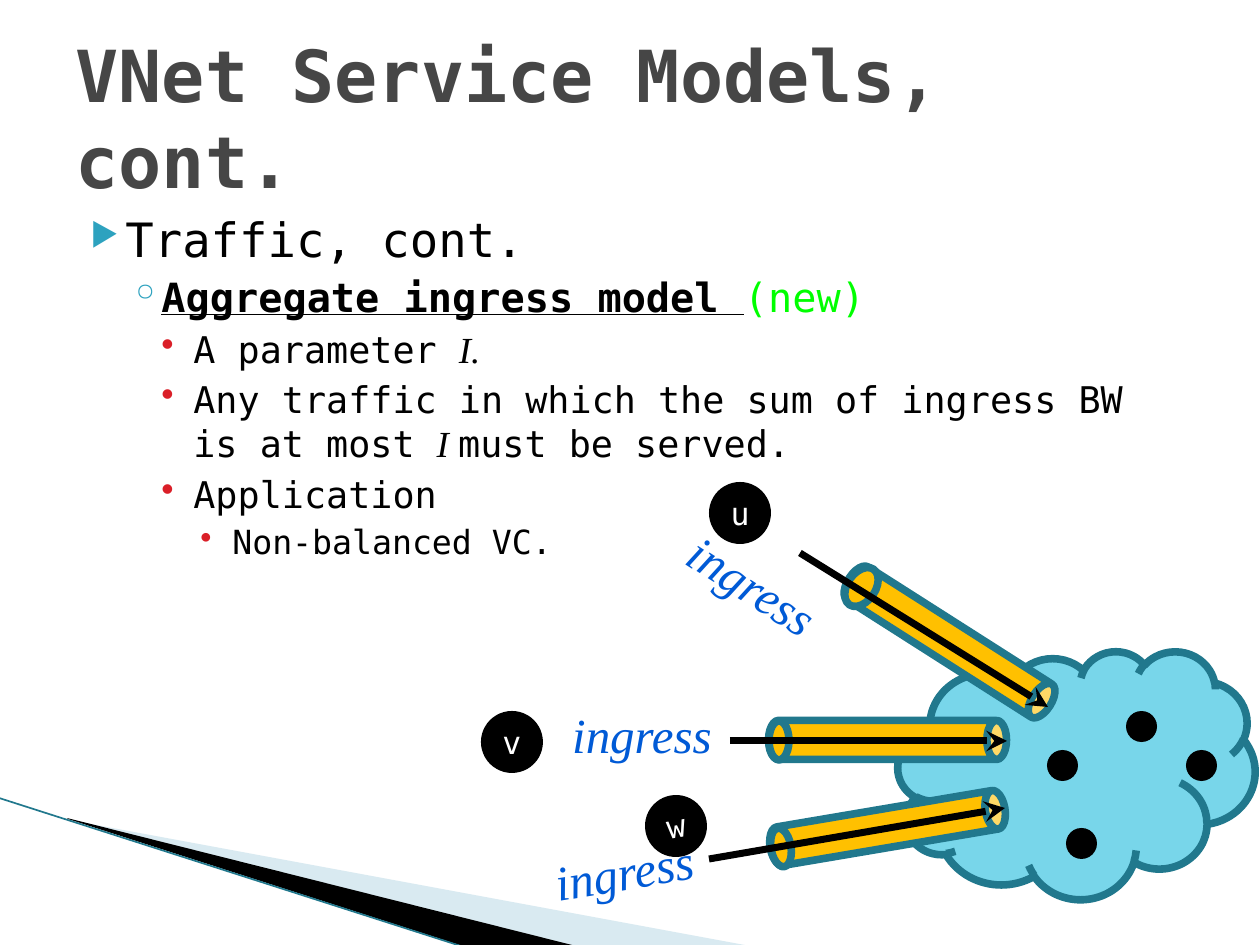
from lxml import etree
from pptx import Presentation
from pptx.dml.color import RGBColor
from pptx.enum.shapes import MSO_CONNECTOR, MSO_SHAPE
from pptx.enum.text import MSO_ANCHOR, PP_ALIGN
from pptx.oxml.ns import qn
from pptx.util import Pt

PX = 914400 / 126
OVAL, CAN, CLOUD = MSO_SHAPE.OVAL, MSO_SHAPE.CAN, MSO_SHAPE.CLOUD
STRAIGHT = MSO_CONNECTOR.STRAIGHT
CENTER, LEFT = PP_ALIGN.CENTER, PP_ALIGN.LEFT
MIDDLE, TOP = MSO_ANCHOR.MIDDLE, MSO_ANCHOR.TOP
MONO, SERIF = "DejaVu Sans Mono", "Times New Roman"
BLACK, WHITE, TEAL, AMBER, BLUE = "000000", "FFFFFF", "21788D", "FFC000", "005AD6"
VARIABLE = {"font": SERIF, "italic": True}

# Content
TITLE = "VNet Service Models, cont."
# Left margin px, hanging px, bullet, bullet colour, bullet size %, space before pt, text size pt
LEVELS = [
    (50, 35, "▶", "2DA2BF", 68, 4, 27),
    (86, 32, "◦", "2DA2BF", 100, 3.2, 23),
    (118, 32, "•", "DA1F28", 100, 3.5, 21),
    (157, 32, "•", "DA1F28", 100, 3.5, 19),
]
BODY = [
    (0, [("Traffic, cont.", {})]),
    (1, [("Aggregate ingress model ", {"bold": True, "underline": True}),
         ("(new)", {"color": "00FF00"})]),
    (2, [("A parameter ", {}), ("I.", VARIABLE)]),
    (2, [("Any traffic in which the sum of ingress BW is at most ", {}),
         ("I ", VARIABLE), ("must be served.", {})]),
    (2, [("Application", {})]),
    (3, [("Non-balanced VC.", {})]),
]
# Each pipe: boxes are left, top, width, height, rotation
PIPES = [
    {"can": (868, 621, 39, 238, 90), "mouth": (769, 721, 20, 39, 0),
     "arrow": (730, 741, 1007, 741), "label": (543, 698, 198, 72, 0),
     "node": ("v", 481, 711, 0)},
    {"can": (868, 709, 39, 238, 80.4), "mouth": (771, 828, 20, 39, 350.4),
     "arrow": (709, 859, 1005, 808), "label": (525, 835, 198, 72, 350.4),
     "node": ("w", 645, 795, 350.4)},
    {"can": (930, 523, 39, 238, 122.5), "mouth": (840, 573, 43, 28, 304.1),
     "arrow": (800, 553, 1048, 707), "label": (654, 549, 198, 72, 32.5),
     "node": ("u", 709, 482, 0)},
]
CLOUD_BOX = (898, 651, 357, 248)
NODE_SIZE, DOT_SIZE = 62, 31
DOTS = [(1126, 711), (1047, 750), (1186, 750), (1066, 828)]
# Corner wedges: points, colour, opacity %
WEDGES = [
    ([(69, 820), (750, 946), (575, 946), (69, 819)], "A0CBDC", 40),
    ([(67, 818), (576, 946), (469, 948), (68, 819)], BLACK, 100),
]


def px(value):
    return round(value * PX)


def rgb(color):
    return RGBColor.from_string(color)


def add_text(paragraph, text, size=21, font=MONO, color=BLACK, bold=False,
             italic=False, underline=False, align=LEFT):
    paragraph.alignment = align
    run = paragraph.add_run()
    run.text = text
    run.font.size, run.font.name = Pt(size), font
    run.font.bold, run.font.italic, run.font.underline = bold, italic, underline
    run.font.color.rgb = rgb(color)


def paint(shape, fill, line=None, width=4.33):
    shape.shadow.inherit = False
    shape.fill.solid()
    shape.fill.fore_color.rgb = rgb(fill)
    if line:
        shape.line.color.rgb = rgb(line)
        shape.line.width = Pt(width)
    else:
        shape.line.fill.background()


def add_shape(slide, kind, box, fill, line=None, rotation=0):
    shape = slide.shapes.add_shape(kind, *map(px, box))
    shape.rotation = rotation
    paint(shape, fill, line)
    return shape


def add_line(slide, ends, color, width, arrow=False):
    line = slide.shapes.add_connector(STRAIGHT, *map(px, ends))
    line.line.color.rgb = rgb(color)
    line.line.width = Pt(width)
    if arrow:
        etree.SubElement(line.line._get_or_add_ln(), qn("a:tailEnd"), type="stealth")
    etree.SubElement(line._element.spPr, qn("a:effectLst"))


def add_wedge(slide, points, color, opacity):
    builder = slide.shapes.build_freeform(*map(px, points[0]))
    builder.add_line_segments([(px(x), px(y)) for x, y in points[1:]])
    wedge = builder.convert_to_shape()
    paint(wedge, color)
    if opacity < 100:
        fill = wedge._element.spPr.find(qn("a:solidFill"))
        etree.SubElement(fill[0], qn("a:alpha"), val=str(opacity * 1000))


def add_text_box(slide, box, rotation=0, wrap=True):
    text_box = slide.shapes.add_textbox(*map(px, box))
    text_box.rotation = rotation
    text_box.text_frame.word_wrap = wrap
    return text_box.text_frame


def set_bullet(paragraph, margin, hanging, bullet, color, percent):
    properties = paragraph._p.get_or_add_pPr()
    properties.set("marL", str(px(margin)))
    properties.set("indent", str(-px(hanging)))
    bullet_color = etree.SubElement(properties, qn("a:buClr"))
    etree.SubElement(bullet_color, qn("a:srgbClr"), val=color)
    etree.SubElement(properties, qn("a:buSzPct"), val=str(percent * 1000))
    etree.SubElement(properties, qn("a:buChar"), char=bullet)


def add_body(slide):
    frame = add_text_box(slide, (63, 204, 1134, 624))
    frame.vertical_anchor = TOP
    for index, (level, runs) in enumerate(BODY):
        *bullet, space_before, size = LEVELS[level]
        paragraph = frame.add_paragraph() if index else frame.paragraphs[0]
        paragraph.level = level
        set_bullet(paragraph, *bullet)
        paragraph.space_before = Pt(space_before if index else 0)
        for text, style in runs:
            add_text(paragraph, text, size=size, **style)


def add_pipe(slide, pipe):
    *box, rotation = pipe["can"]
    can = add_shape(slide, CAN, box, AMBER, TEAL, rotation)
    can.adjustments[0] = 0.505
    *box, rotation = pipe["mouth"]
    add_shape(slide, OVAL, box, AMBER, TEAL, rotation)
    add_line(slide, pipe["arrow"], BLACK, 4, arrow=True)

    *box, rotation = pipe["label"]
    frame = add_text_box(slide, box, rotation, wrap=False)
    add_text(frame.paragraphs[0], "ingress", size=28, font=SERIF, color=BLUE,
             italic=True, align=CENTER)

    name, left, top, rotation = pipe["node"]
    node = add_shape(slide, OVAL, (left, top, NODE_SIZE, NODE_SIZE), BLACK, rotation=rotation)
    node.text_frame.vertical_anchor = MIDDLE
    node.text_frame.word_wrap = False
    add_text(node.text_frame.paragraphs[0], name, size=18, color=WHITE, align=CENTER)


def main():
    presentation = Presentation()
    presentation.slide_width, presentation.slide_height = px(1260), px(945)
    slide = presentation.slides.add_slide(presentation.slide_layouts[5])

    # Corner decoration
    for wedge in WEDGES:
        add_wedge(slide, *wedge)
    add_line(slide, (-1, 798, 467, 948), TEAL, 0.95)

    # Title and bullets
    title = slide.shapes.title
    title.left, title.top, title.width, title.height = map(px, (63, 38, 1134, 157))
    title.text_frame.vertical_anchor = MIDDLE
    add_text(title.text_frame.paragraphs[0], TITLE, size=41, color="464646", bold=True)
    add_body(slide)

    # Network cloud with its pipes
    add_shape(slide, CLOUD, CLOUD_BOX, "78D6EA", TEAL)
    for pipe in PIPES:
        add_pipe(slide, pipe)
    for left, top in DOTS:
        add_shape(slide, OVAL, (left, top, DOT_SIZE, DOT_SIZE), BLACK)

    presentation.save("out.pptx")


if __name__ == "__main__":
    main()
